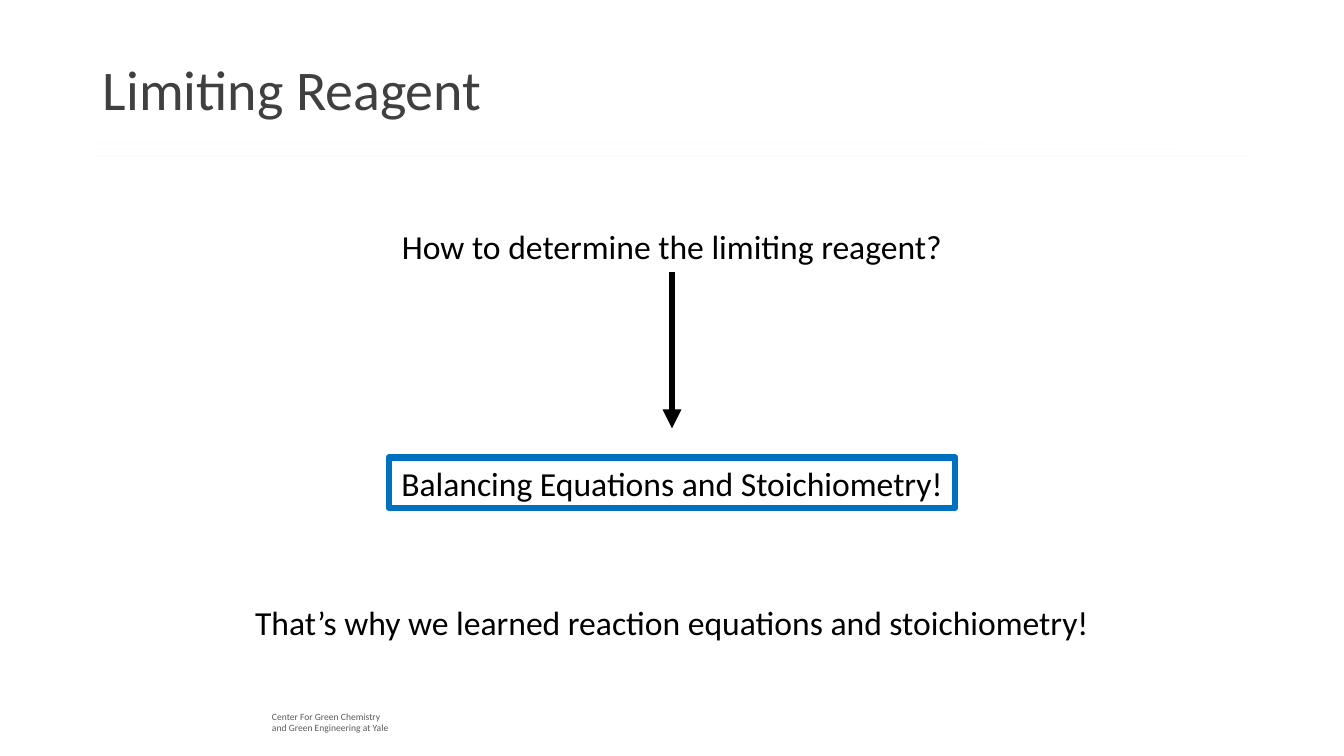
from dataclasses import dataclass
from typing import Optional

import lxml.etree
import pptx
import pptx.dml.color
import pptx.enum.shapes
import pptx.enum.text
import pptx.oxml.ns
import pptx.util

RGBColor = pptx.dml.color.RGBColor
Anchor = pptx.enum.text.MSO_ANCHOR
Align = pptx.enum.text.PP_ALIGN

BLACK = RGBColor(0x00, 0x00, 0x00)
TITLE_GRAY = RGBColor(0x40, 0x40, 0x40)
CAPTION_GRAY = RGBColor(0x59, 0x59, 0x59)
FRAME_BLUE = RGBColor(0x00, 0x70, 0xC0)
RULE_BLUE = RGBColor(0x4E, 0xB3, 0xCF)
RULE_TEAL = RGBColor(0x44, 0xC1, 0xA3)
RULE_GREEN = RGBColor(0x37, 0xA7, 0x6F)

FONT = "Calibri"
SLIDE_WIDTH = pptx.util.Inches(13.33)
SLIDE_HEIGHT = pptx.util.Inches(7.5)
MIDDLE = 50
STATEMENT_HEIGHT = 6.67


# All positions and lengths are percentages of the slide's width or height.
@dataclass
class Label:
    text: str
    left: float
    top: float
    width: float
    height: float
    size: float = 24
    color: RGBColor = BLACK
    align: Align = Align.LEFT
    anchor: Anchor = Anchor.TOP
    wrap: bool = True
    spacing: float = 1.0
    frame: Optional[RGBColor] = None


@dataclass
class Stroke:
    start_x: float
    start_y: float
    end_x: float
    end_y: float
    color: RGBColor
    weight: float
    opacity: int = 100
    arrow: bool = False


def statement(text: str, top: float, width: float,
              frame: Optional[RGBColor] = None) -> Label:
    """One-line text centred on the slide."""
    return Label(text, MIDDLE - width / 2, top, width, STATEMENT_HEIGHT,
                 align=Align.CENTER, wrap=False, frame=frame)


def across(share: float) -> int:
    return round(SLIDE_WIDTH * share / 100)


def down(share: float) -> int:
    return round(SLIDE_HEIGHT * share / 100)


def draw_label(slide, label: Label) -> None:
    box = (across(label.left), down(label.top), across(label.width), down(label.height))
    if label.frame is None:
        shape = slide.shapes.add_textbox(*box)
    else:
        shape = slide.shapes.add_shape(pptx.enum.shapes.MSO_SHAPE.RECTANGLE, *box)
        shape.shadow.inherit = False
        shape.fill.background()
        shape.line.color.rgb = label.frame
        shape.line.width = pptx.util.Pt(4.5)
        lxml.etree.SubElement(shape.line._get_or_add_ln(), pptx.oxml.ns.qn("a:round"))
    text_frame = shape.text_frame
    text_frame.word_wrap = label.wrap
    text_frame.vertical_anchor = label.anchor
    text_frame.text = label.text
    for paragraph in text_frame.paragraphs:
        paragraph.alignment = label.align
        paragraph.line_spacing = label.spacing
        for run in paragraph.runs:
            run.font.name = FONT
            run.font.size = pptx.util.Pt(label.size)
            run.font.color.rgb = label.color


def draw_stroke(slide, stroke: Stroke) -> None:
    connector = slide.shapes.add_connector(
        pptx.enum.shapes.MSO_CONNECTOR.STRAIGHT,
        across(stroke.start_x), down(stroke.start_y),
        across(stroke.end_x), down(stroke.end_y))
    connector.line.color.rgb = stroke.color
    connector.line.width = pptx.util.Pt(stroke.weight)
    qn = pptx.oxml.ns.qn
    line = connector.line._get_or_add_ln()
    if stroke.opacity < 100:
        color = line.find(".//" + qn("a:srgbClr"))
        lxml.etree.SubElement(color, qn("a:alpha"), val=str(stroke.opacity * 1000))
    if stroke.arrow:
        lxml.etree.SubElement(line, qn("a:tailEnd"), type="triangle")
    lxml.etree.SubElement(connector._element.spPr, qn("a:effectLst"))


STROKES = [
    # Faint rules under the title
    Stroke(6.9, 18.8, 73.3, 18.8, RULE_BLUE, 0.5, opacity=5),
    Stroke(6.75, 19.73, 87.85, 19.73, RULE_TEAL, 0.5, opacity=5),
    Stroke(6.83, 20.67, 93.17, 20.67, RULE_GREEN, 0.5, opacity=5),
    # Arrow from the question to the answer
    Stroke(MIDDLE, 36, MIDDLE, 56.67, BLACK, 4.5, arrow=True),
]

LABELS = [
    Label("Center For Green Chemistry\nand Green Engineering at Yale",
          19.5, 93.33, 13.95, 4.4, size=6.8, color=CAPTION_GRAY),
    Label("Limiting Reagent", 6.9, 2.53, 86.25, 19.33, size=40,
          color=TITLE_GRAY, anchor=Anchor.MIDDLE, spacing=0.9),
    statement("How to determine the limiting reagent?", 29.2, 42.1),
    statement("Balancing Equations and Stoichiometry!", 60.53, 42.16, FRAME_BLUE),
    statement("That’s why we learned reaction equations and stoichiometry!",
              78.93, 64.2),
]


def main() -> None:
    presentation = pptx.Presentation()
    presentation.slide_width = SLIDE_WIDTH
    presentation.slide_height = SLIDE_HEIGHT
    slide = presentation.slides.add_slide(presentation.slide_layouts[6])
    for stroke in STROKES:
        draw_stroke(slide, stroke)
    for label in LABELS:
        draw_label(slide, label)
    presentation.save("out.pptx")


if __name__ == "__main__":
    main()
